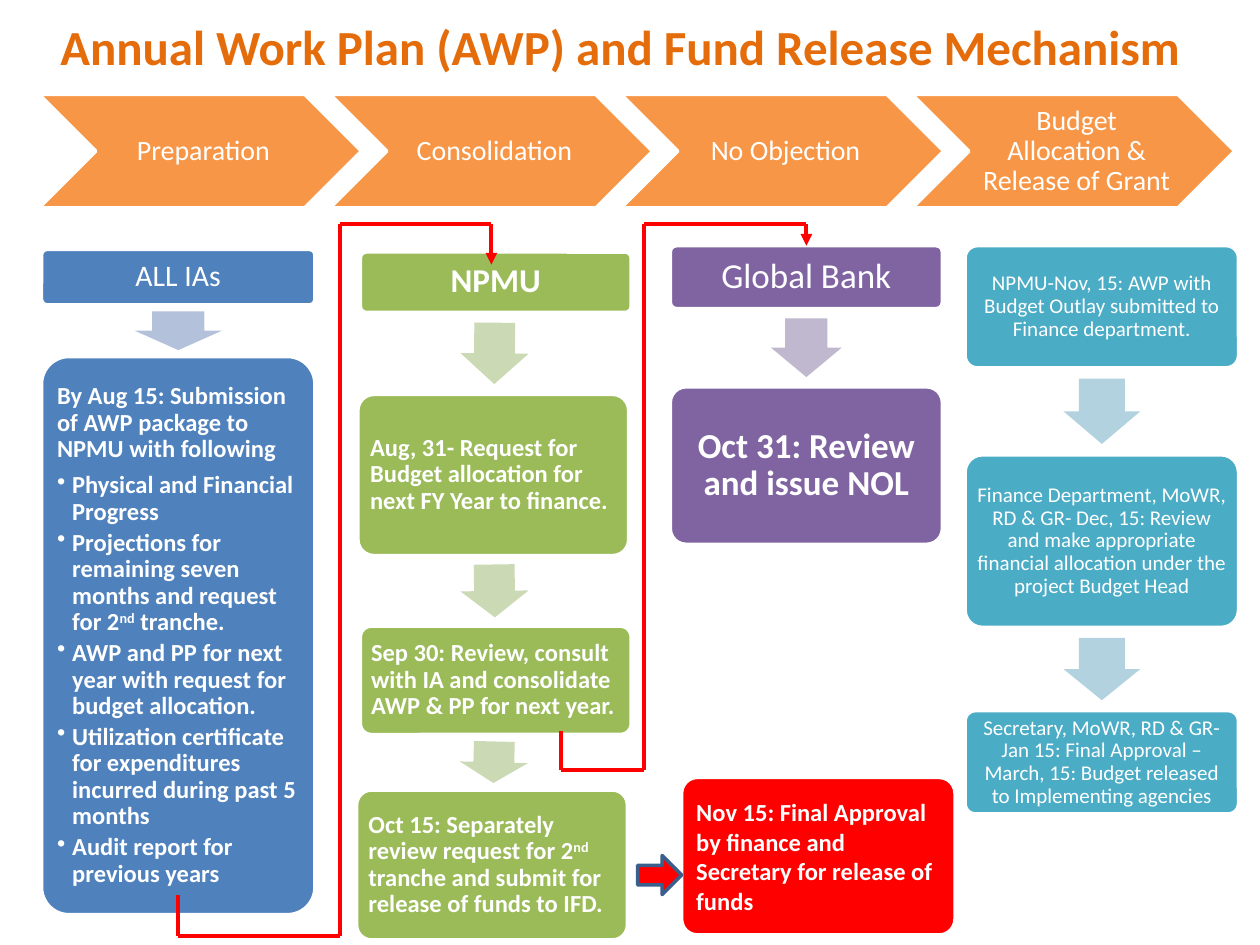
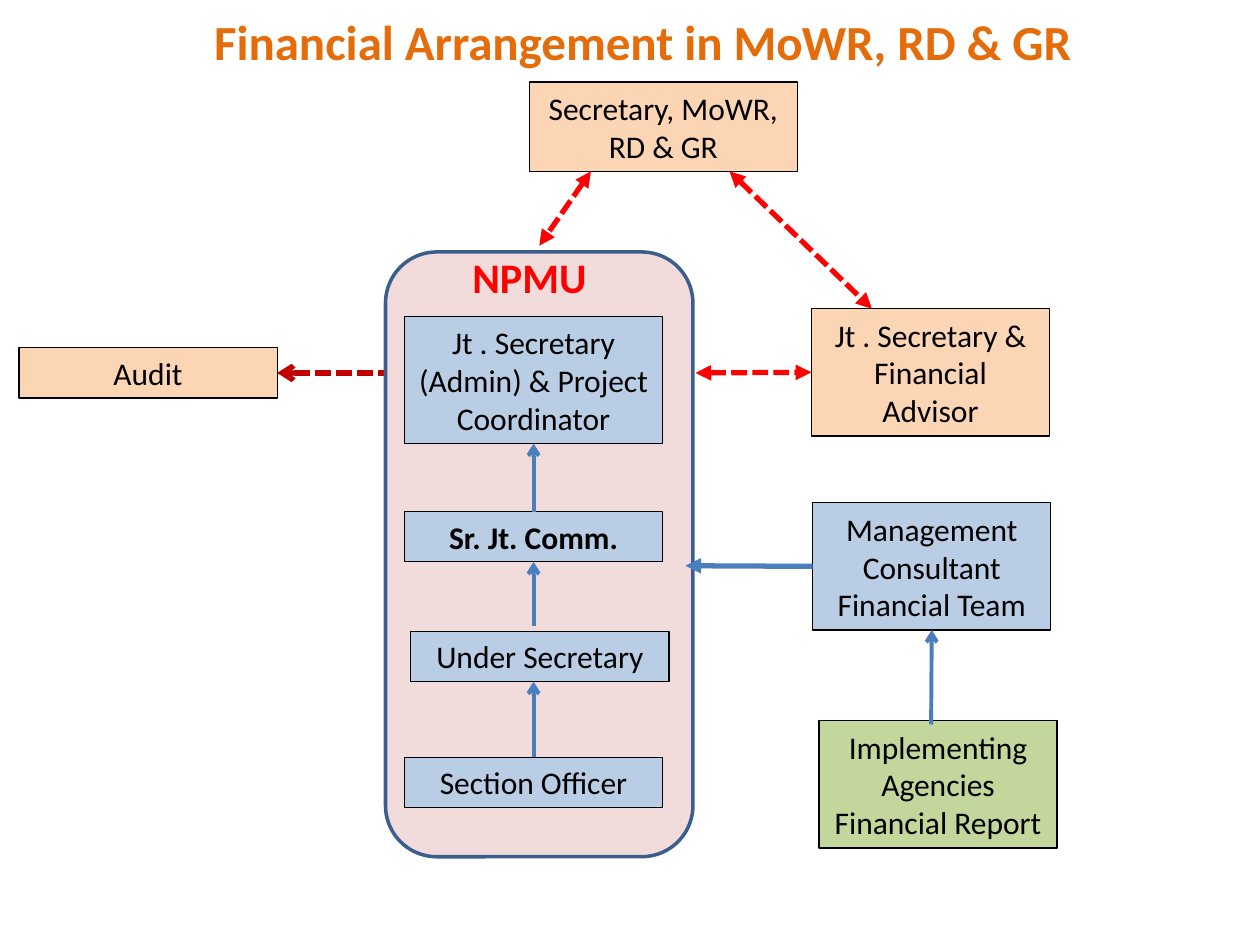
from lxml.etree import SubElement
from pptx import Presentation
from pptx.dml.color import RGBColor
from pptx.enum.dml import MSO_LINE
from pptx.enum.shapes import MSO_CONNECTOR, MSO_SHAPE
from pptx.enum.text import MSO_ANCHOR, MSO_AUTO_SIZE, PP_ALIGN
from pptx.oxml.ns import qn
from pptx.util import Inches, Pt

FONT = "Calibri"
WHITE, BLACK, RED, DARK_RED = "FFFFFF", "000000", "FF0000", "C00000"
TITLE_ORANGE, ORANGE, PEACH = "E46C0A", "F79646", "FCD5B5"
BLUE, PALE_BLUE, LINK_BLUE, EDGE_BLUE = "4F81BD", "B9CDE5", "4B7EBC", "3A5F8C"
GREEN, PALE_GREEN, PURPLE, TEAL, PINK = "9BBB59", "C3D69B", "8064A2", "4BACC6", "F2DCDB"
TOP, LEFT, BOTTOM, RIGHT = range(4)


def colour(code):
    return RGBColor.from_string(code)


def place(box):
    return [Inches(value) for value in box]


def write(paragraph, text, size, ink, bold=False, align=PP_ALIGN.CENTER):
    paragraph.alignment = align
    for index, piece in enumerate(text.split("^")):
        run = paragraph.add_run()
        run.text = piece
        run.font.name = FONT
        run.font.size = Pt(size)
        run.font.bold = bold
        run.font.color.rgb = colour(ink)
        if index % 2:
            run.font._element.set("baseline", "30000")


def frame_text(holder, insets=(0.1, 0.05, 0.1, 0.05), anchor=MSO_ANCHOR.MIDDLE):
    frame = holder.text_frame
    frame.word_wrap = True
    frame.auto_size = MSO_AUTO_SIZE.NONE
    frame.vertical_anchor = anchor
    (frame.margin_left, frame.margin_top,
     frame.margin_right, frame.margin_bottom) = place(insets)
    return frame


def add_block(slide, preset, box, fill, edge=None, width=2.0):
    block = slide.shapes.add_shape(preset, *place(box))
    block.shadow.inherit = False
    block.fill.solid()
    block.fill.fore_color.rgb = colour(fill)
    if edge:
        block.line.color.rgb = colour(edge)
        block.line.width = Pt(width)
    else:
        block.line.fill.background()
    return block


def add_link(slide, start, end, ink, width, head=None, tail=None, dashed=False):
    link = slide.shapes.add_connector(MSO_CONNECTOR.STRAIGHT, *place(start + end))
    link.line.color.rgb = colour(ink)
    link.line.width = Pt(width)
    if dashed:
        link.line.dash_style = MSO_LINE.SQUARE_DOT
    outline = link.line._get_or_add_ln()
    for tag, kind in (("a:headEnd", head), ("a:tailEnd", tail)):
        if kind:
            SubElement(outline, qn(tag), type=kind)
    SubElement(link._element.spPr, qn("a:effectLst"))
    return link


def add_titled_slide(deck, title, box):
    slide = deck.slides.add_slide(deck.slide_layouts[5])
    heading = slide.shapes.title
    heading.left, heading.top, heading.width, heading.height = place(box)
    frame = frame_text(heading, anchor=MSO_ANCHOR.TOP)
    write(frame.paragraphs[0], title, 28, TITLE_ORANGE, True)
    return slide


def add_phases(slide, box, phases):
    left, top, width, height = box
    pitch = 2.31
    for index, phase in enumerate(phases):
        chevron = add_block(slide, MSO_SHAPE.CHEVRON,
                            (left + index * pitch, top, width, height), ORANGE, WHITE)
        paragraph = frame_text(chevron, (0.07, 0.02, 0.02, 0.02)).paragraphs[0]
        paragraph.line_spacing = 0.9
        write(paragraph, phase, 16, WHITE)


def add_card(slide, box, fill, text, size, bold=False, align=PP_ALIGN.CENTER,
             inset=0.06, spacing=0.9):
    card = add_block(slide, MSO_SHAPE.ROUNDED_RECTANGLE, box, fill, WHITE)
    card.adjustments[0] = 0.1
    paragraph = frame_text(card, (inset,) * 4).paragraphs[0]
    paragraph.line_spacing = spacing
    write(paragraph, text, size, WHITE, bold, align)
    return card


def add_bullets(card, items):
    card.text_frame.paragraphs[0].space_after = Pt(5.5)
    for item in items:
        paragraph = card.text_frame.add_paragraph()
        paragraph.line_spacing = 0.9
        paragraph.space_after = Pt(2.5)
        properties = paragraph._p.get_or_add_pPr()
        properties.set("marL", str(Inches(0.12)))
        properties.set("indent", str(-Inches(0.12)))
        SubElement(properties, qn("a:buChar"), char="•")
        write(paragraph, item, 14, WHITE, True, PP_ALIGN.LEFT)


def add_column(slide, box, fill, arrow_fill, arrow_width, steps, tilts=(0, 0, 0)):
    left, top, width = box
    cards = []
    previous = None
    for shift, offset, height, *content in steps:
        start = top + offset
        middle = left + shift + width / 2
        if previous:
            last_middle, last_end = previous
            gap = start - last_end
            length = 0.75 * gap
            arrow = add_block(slide, MSO_SHAPE.DOWN_ARROW,
                              ((middle + last_middle - arrow_width) / 2,
                               last_end + (gap - length) / 2, arrow_width, length), arrow_fill)
            arrow.adjustments[0] = 0.6
            arrow.rotation = tilts[len(cards) - 1]
        cards.append(add_card(slide, (left + shift, start, width, height), fill, *content))
        previous = middle, start + height
    return cards


def add_route(slide, points):
    legs = list(zip(points, points[1:]))
    for index, (start, end) in enumerate(legs, 1):
        leg = add_link(slide, start, end, RED, 2.25,
                       tail="triangle" if index == len(legs) else None)
    return leg


def build_work_plan(deck):
    slide = add_titled_slide(deck, "Annual Work Plan (AWP) and Fund Release Mechanism",
                             (0.02, 0.08, 9.8, 0.57))
    add_phases(slide, (0.31, 0.75, 2.56, 0.9),
               ["Preparation", "Consolidation", "No Objection",
                "Budget Allocation & Release of Grant"])

    agencies, submission = add_column(slide, (0.33, 1.98, 2.17), BLUE, "B3C1DB", 0.69, [
        (0, 0, 0.44, "ALL IAs", 17),
        (0, 0.85, 4.43, "By Aug 15: Submission of AWP package to NPMU with following",
         14, True, PP_ALIGN.LEFT),
    ])
    add_bullets(submission, [
        "Physical and Financial Progress",
        "Projections for remaining seven months and request for 2^nd^ tranche.",
        "AWP and PP for next year with request for budget allocation.",
        "Utilization certificate for expenditures incurred during past 5 months",
        "Audit report for previous years",
    ])
    add_column(slide, (2.86, 2, 2.15), GREEN, "CBDAB5", 0.54, [
        (0, 0, 0.48, "NPMU", 19, True),
        (-0.02, 1.13, 1.28, "Aug, 31- Request for Budget allocation for next FY Year to finance.",
         14, True, PP_ALIGN.LEFT),
        (0, 2.97, 0.86, "Sep 30: Review, consult with IA and consolidate AWP & PP for next year.",
         14, True, PP_ALIGN.LEFT),
        (-0.03, 4.27, 1.19, "Oct 15: Separately review request for 2^nd^ tranche and submit "
         "for release of funds to IFD.", 14, True, PP_ALIGN.LEFT),
    ], (0.5, 359.2, 1.4))
    bank, review = add_column(slide, (5.32, 1.95, 2.16), PURPLE, "C0B8CE", 0.56, [
        (0, 0, 0.5, "Global Bank", 20),
        (0, 1.12, 1.25, "Oct 31: Review and issue NOL", 20, True, PP_ALIGN.CENTER, 0.08),
    ])
    add_column(slide, (7.66, 1.95, 2.17), TEAL, "B2D2DF", 0.61, [
        (0, offset, height, text, 12, False, PP_ALIGN.CENTER, 0.05)
        for offset, height, text in [
            (0, 0.97, "NPMU-Nov, 15: AWP with Budget Outlay submitted to Finance department."),
            (1.66, 1.37, "Finance Department, MoWR, RD & GR- Dec, 15: Review and make "
             "appropriate financial allocation under the project Budget Head"),
            (3.69, 0.82, "Secretary, MoWR, RD & GR-Jan 15: Final Approval –March, 15: "
             "Budget released to Implementing agencies"),
        ]
    ])

    add_route(slide, [(1.41, 7.1), (1.41, 7.43), (2.7, 7.43), (2.7, 1.78),
                      (3.9, 1.78), (3.9, 2.1)])
    to_bank = add_route(slide, [(4.45, 5.8), (4.45, 6.11), (5.11, 6.11), (5.11, 1.78),
                                (6.4, 1.78), (6.4, 1.95)])
    to_bank.end_connect(bank, TOP)
    add_card(slide, (5.41, 6.17, 2.17, 1.25), RED,
             "Nov 15: Final Approval by finance and Secretary for release of funds",
             14, True, PP_ALIGN.LEFT, 0.08, 1.0)
    add_block(slide, MSO_SHAPE.RIGHT_ARROW, (5.06, 6.79, 0.35, 0.31), RED, EDGE_BLUE)


def add_office(slide, box, fill, text, bold=False):
    office = add_block(slide, MSO_SHAPE.RECTANGLE, box, fill, BLACK, 0.75)
    write(frame_text(office).paragraphs[0], text, 18, BLACK, bold)
    return office


def add_unit(slide, box):
    left, top, width, height = box
    add_block(slide, MSO_SHAPE.ROUNDED_RECTANGLE, box, PINK, EDGE_BLUE)
    label = slide.shapes.add_textbox(*place((left + 0.59, top - 0.05, 1.25, 0.5)))
    write(frame_text(label, anchor=MSO_ANCHOR.TOP).paragraphs[0], "NPMU", 24, RED, True,
          PP_ALIGN.LEFT)

    office_width = 2.05
    coordinator, commissioner, under, section = [
        add_office(slide, (left + shift, top + offset, office_width, tall),
                   PALE_BLUE, text, bold)
        for shift, offset, tall, text, bold in [
            (0.15, 0.51, 1.01, "Jt . Secretary (Admin) & Project Coordinator", False),
            (0.15, 2.06, 0.4, "Sr. Jt. Comm.", True),
            (0.2, 3.01, 0.4, "Under Secretary", False),
            (0.15, 4.01, 0.4, "Section Officer", False),
        ]
    ]
    middle = left + 0.15 + office_width / 2
    first, second, third = [
        add_link(slide, (middle, top + start), (middle, top + end), LINK_BLUE, 2.25, tail="arrow")
        for start, end in [(2.06, 1.52), (2.97, 2.46), (4.01, 3.41)]
    ]
    first.begin_connect(commissioner, TOP)
    first.end_connect(coordinator, BOTTOM)
    second.end_connect(commissioner, BOTTOM)
    third.begin_connect(section, TOP)


def build_arrangement(deck):
    slide = add_titled_slide(deck, "Financial Arrangement in MoWR, RD & GR",
                             (0.2, 0.04, 9.8, 0.57))
    add_office(slide, (4.2, 0.65, 2.13, 0.71), PEACH, "Secretary, MoWR, RD & GR")
    advisor = add_office(slide, (6.44, 2.45, 1.89, 1.01), PEACH,
                         "Jt . Secretary & Financial Advisor")
    consultant = add_office(slide, (6.45, 3.99, 1.89, 1.01), PALE_BLUE,
                            "Management Consultant Financial Team")
    add_office(slide, (6.5, 5.72, 1.89, 1.01), PALE_GREEN,
               "Implementing Agencies Financial Report")
    audit = add_office(slide, (0.15, 2.76, 2.05, 0.4), PEACH, "Audit")

    report = add_link(slide, (7.39, 5.75), (7.39, 5), LINK_BLUE, 2.25, tail="arrow")
    report.end_connect(consultant, BOTTOM)
    auditing = add_link(slide, (2.2, 2.96), (3.06, 2.96), DARK_RED, 3, head="arrow", dashed=True)
    auditing.begin_connect(audit, RIGHT)

    add_unit(slide, (3.06, 2, 2.44, 4.8))

    support = add_link(slide, (6.45, 4.49), (5.44, 4.49), LINK_BLUE, 3, tail="triangle")
    support.begin_connect(consultant, LEFT)
    advice, *oversight = [
        add_link(slide, start, end, RED, 3, "triangle", "triangle", True)
        for start, end in [((5.52, 2.96), (6.44, 2.96)), ((4.69, 1.36), (4.28, 1.95)),
                           ((5.79, 1.36), (6.92, 2.45))]
    ]
    advice.end_connect(advisor, LEFT)


def main():
    deck = Presentation()
    deck.slide_width, deck.slide_height = Inches(10), Inches(7.5)
    build_work_plan(deck)
    build_arrangement(deck)
    deck.save("out.pptx")


if __name__ == "__main__":
    main()
